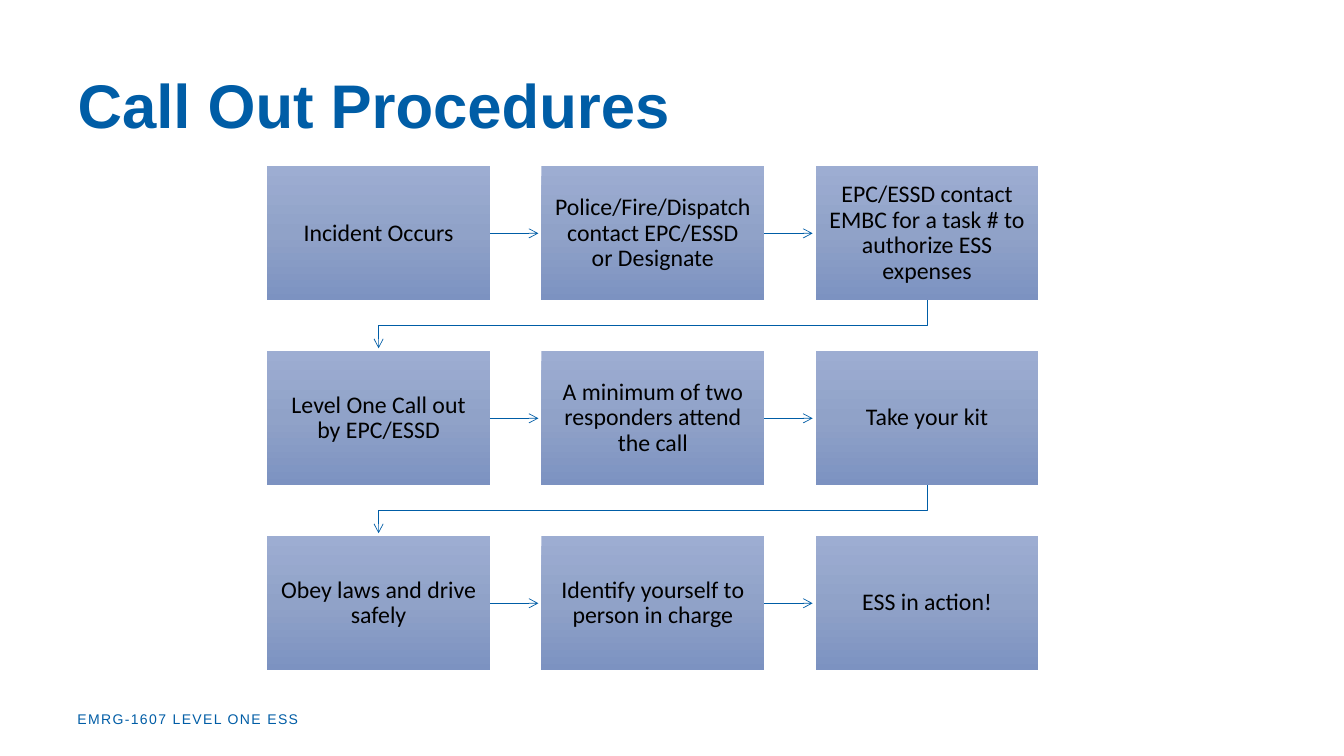
from copy import deepcopy

from pptx import Presentation
from pptx.dml.color import RGBColor
from pptx.enum.shapes import MSO_CONNECTOR, MSO_SHAPE
from pptx.enum.text import MSO_ANCHOR, MSO_AUTO_SIZE, PP_ALIGN
from pptx.oxml.ns import qn
from pptx.util import Inches, Pt
from lxml.etree import SubElement

BLUE = "005DA6"
BOX_GRADIENT = [(0, "9DADD2"), (0.5, "90A2C8"), (1, "7C92C1")]
STEPS = [
    ["Incident Occurs",
     "Police/Fire/Dispatch contact EPC/ESSD or Designate",
     "EPC/ESSD contact EMBC for a task # to authorize ESS expenses"],
    ["Level One Call out by EPC/ESSD",
     "A minimum of two responders attend the call",
     "Take your kit"],
    ["Obey laws and drive safely",
     "Identify yourself to person in charge",
     "ESS in action!"],
]


def color(hex_code):
    return RGBColor.from_string(hex_code)


def write_text(shape, text, size, hex_code, font="Arial", bold=False,
               align=PP_ALIGN.LEFT, anchor=MSO_ANCHOR.MIDDLE,
               line_spacing=1.0, margin=None, tracking=None):
    frame = shape.text_frame
    frame.word_wrap = True
    frame.auto_size = MSO_AUTO_SIZE.NONE
    frame.vertical_anchor = anchor
    if margin is not None:
        frame.margin_left = frame.margin_right = Inches(margin)
        frame.margin_top = frame.margin_bottom = Inches(margin)
    paragraph = frame.paragraphs[0]
    paragraph.alignment = align
    paragraph.line_spacing = line_spacing
    run = paragraph.add_run()
    run.text = text
    run.font.name = font
    run.font.size = Pt(size)
    run.font.bold = bold
    run.font.color.rgb = color(hex_code)
    if tracking:
        run.font._element.set("spc", str(int(tracking * 100)))


def place(shape, left, top, width, height):
    shape.left, shape.top = Inches(left), Inches(top)
    shape.width, shape.height = Inches(width), Inches(height)


def fill_gradient(shape, stops):
    shape.fill.gradient()
    shape.fill.gradient_angle = 270
    # The default gradient has two stops; add a middle one
    stop_list = shape._element.spPr.find(qn("a:gradFill")).find(qn("a:gsLst"))
    stop_list.insert(1, deepcopy(stop_list[0]))
    for stop, (position, hex_code) in zip(shape.fill.gradient_stops, stops):
        stop.position = position
        stop.color.rgb = color(hex_code)


def style_arrow(arrow):
    arrow.line.color.rgb = color(BLUE)
    arrow.line.width = Pt(0.5)
    SubElement(arrow.line._get_or_add_ln(), qn("a:tailEnd"), type="arrow")


def add_step(slide, text, left, top, width, height):
    box = slide.shapes.add_shape(MSO_SHAPE.RECTANGLE, Inches(left), Inches(top),
                                 Inches(width), Inches(height))
    box.shadow.inherit = False
    box.line.fill.background()
    fill_gradient(box, BOX_GRADIENT)
    write_text(box, text, 17, "000000", font="Calibri",
               align=PP_ALIGN.CENTER, line_spacing=0.9, margin=0.13)
    return box


def add_straight_arrow(slide, box, next_box, clearance):
    middle = box.top + box.height // 2
    arrow = slide.shapes.add_connector(
        MSO_CONNECTOR.STRAIGHT, box.left + box.width, middle,
        next_box.left - clearance, middle)
    arrow.begin_connect(box, 3)
    SubElement(arrow._element.spPr, qn("a:effectLst"))
    style_arrow(arrow)


def add_return_arrow(slide, box, next_box, clearance):
    start_x = box.left + box.width // 2
    end_x = next_box.left + next_box.width // 2
    start_y = box.top + box.height
    turn_y = (start_y + next_box.top) // 2
    builder = slide.shapes.build_freeform(start_x, start_y)
    builder.add_line_segments(
        [(start_x, turn_y), (end_x, turn_y), (end_x, next_box.top - clearance)],
        close=False)
    arrow = builder.convert_to_shape()
    arrow.shadow.inherit = False
    arrow.fill.background()
    style_arrow(arrow)


def add_flow(slide, left, top, width, height):
    box_width, box_height = 2.21, 1.33
    column_step = (width - box_width) / (len(STEPS[0]) - 1)
    row_step = (height - box_height) / (len(STEPS) - 1)
    boxes = [[add_step(slide, text, left + column * column_step,
                       top + row * row_step, box_width, box_height)
              for column, text in enumerate(texts)]
             for row, texts in enumerate(STEPS)]

    # Arrows along each row, then back to the start of the next row
    clearance = Inches(0.03)
    for row in boxes:
        for box, next_box in zip(row, row[1:]):
            add_straight_arrow(slide, box, next_box, clearance)
    for row, next_row in zip(boxes, boxes[1:]):
        add_return_arrow(slide, row[-1], next_row[0], clearance)


def add_title(slide, left, top, width, height):
    title = slide.shapes.title
    place(title, left, top, width, height)
    write_text(title, "Call Out Procedures", 44, BLUE, bold=True,
               line_spacing=0.9)


def add_footer(slide, left, top, width, height):
    footer = slide.shapes.add_textbox(Inches(left), Inches(top),
                                      Inches(width), Inches(height))
    write_text(footer, "EMRG-1607 LEVEL ONE ESS", 10, BLUE,
               anchor=MSO_ANCHOR.TOP, tracking=1)


def main():
    presentation = Presentation()
    presentation.slide_width = Inches(13.33)
    presentation.slide_height = Inches(7.5)
    slide = presentation.slides.add_slide(presentation.slide_layouts[5])
    add_title(slide, 0.67, 0.4, 12, 1.35)
    add_flow(slide, 2.65, 1.65, 7.65, 5)
    add_footer(slide, 0.67, 7, 6, 0.27)
    presentation.save("out.pptx")


if __name__ == "__main__":
    main()
